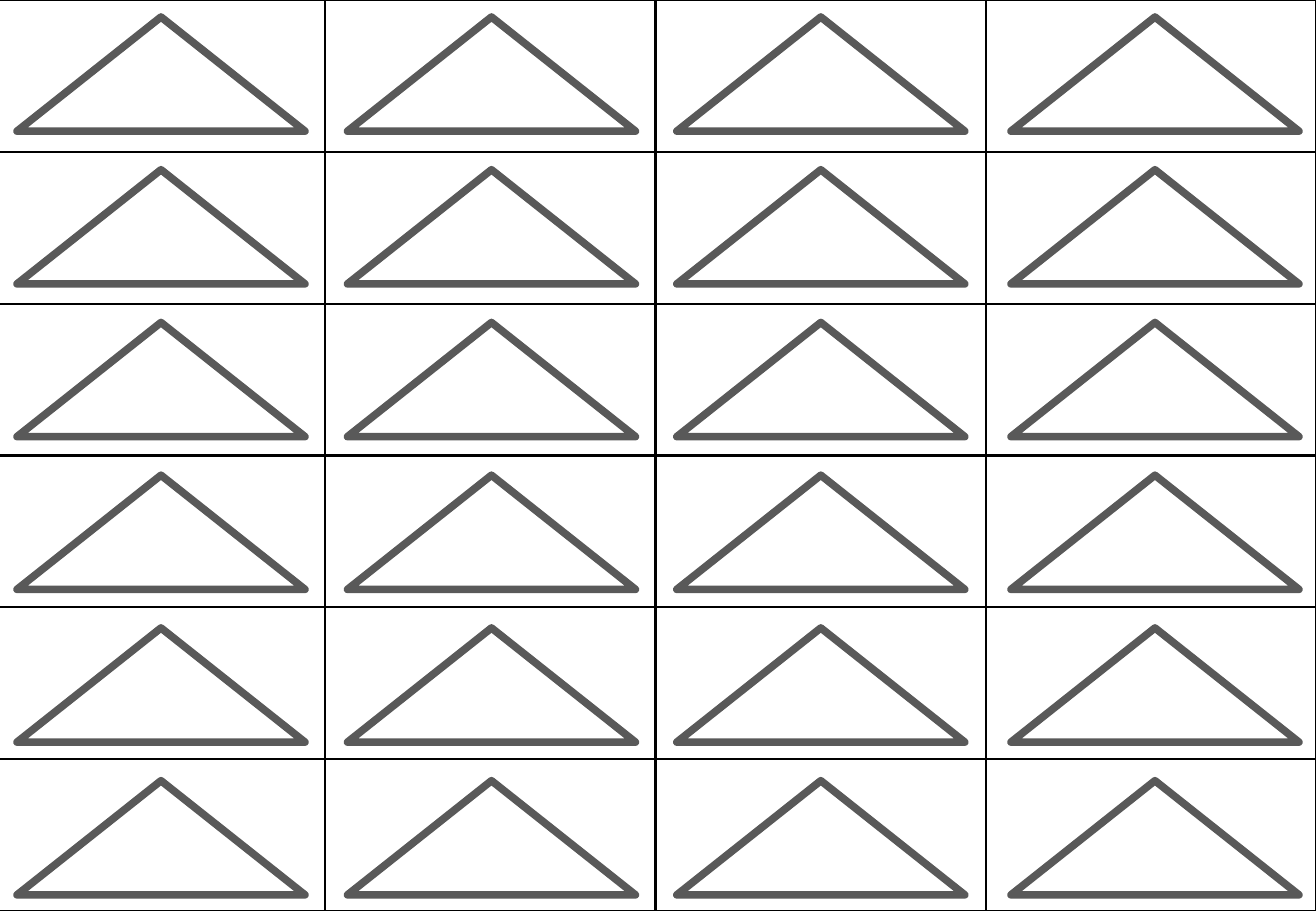
import pptx
import pptx.util
import pptx.dml.color
import pptx.enum.shapes
import pptx.oxml
import pptx.oxml.ns

PX = 2286


def px(n):
    return pptx.util.Emu(n * PX)


def tint(code):
    return pptx.dml.color.RGBColor.from_string(code)


def write(frame, text, font="Calibri", size=18, color="000000"):
    frame.text = text
    face = frame.paragraphs[0].font
    face.name = font
    face.size = pptx.util.Pt(size)
    face.color.rgb = tint(color)


class Sheet:
    paper = "FFFFFF"
    rule = "000000"
    edge = "595959"
    thin = 1.5
    thick = 4.5

    def __init__(self, deck):
        self.slide = deck.slides.add_slide(deck.slide_layouts[6])

    def border(self, cell):
        props = cell._tc.get_or_add_tcPr()
        for side in ("lnL", "lnR", "lnT", "lnB"):
            props.append(pptx.oxml.parse_xml(
                f'<a:{side} {pptx.oxml.ns.nsdecls("a")} w="{pptx.util.Pt(self.thin)}">'
                f'<a:solidFill><a:srgbClr val="{self.rule}"/></a:solidFill></a:{side}>'))

    def table(self, rows, cols, left, top, wide, high):
        box = self.slide.shapes.add_table(
            rows, cols, px(left), px(top), px(wide * cols), px(high * rows))
        grid = box.table
        grid.first_row = False
        grid.horz_banding = False
        for col in grid.columns:
            col.width = px(wide)
        for row in grid.rows:
            row.height = px(high)
        for cell in grid.iter_cells():
            write(cell.text_frame, "")
            self.border(cell)
            cell.fill.solid()
            cell.fill.fore_color.rgb = tint(self.paper)

    def triangle(self, left, top, wide, high):
        shape = self.slide.shapes.add_shape(
            pptx.enum.shapes.MSO_SHAPE.ISOSCELES_TRIANGLE,
            px(left), px(top), px(wide), px(high))
        shape.shadow.inherit = False
        shape.fill.solid()
        shape.fill.fore_color.rgb = tint(self.paper)
        shape.line.width = pptx.util.Pt(self.thick)
        shape.line.color.rgb = tint(self.edge)
        shape.line._get_or_add_ln().append(
            pptx.oxml.parse_xml(f'<a:round {pptx.oxml.ns.nsdecls("a")}/>'))


def main():
    deck = pptx.Presentation()
    deck.slide_width = px(4332)
    deck.slide_height = px(3000)
    sheet = Sheet(deck)
    rows, lefts = 6, (56, 1144, 2228, 3328)
    sheet.table(rows, len(lefts), -16, 0, 1087, 500)
    for row in range(rows):
        for left in lefts:
            sheet.triangle(left, 56 + 503 * row, 948, 376)
    deck.save("out.pptx")


if __name__ == "__main__":
    main()
